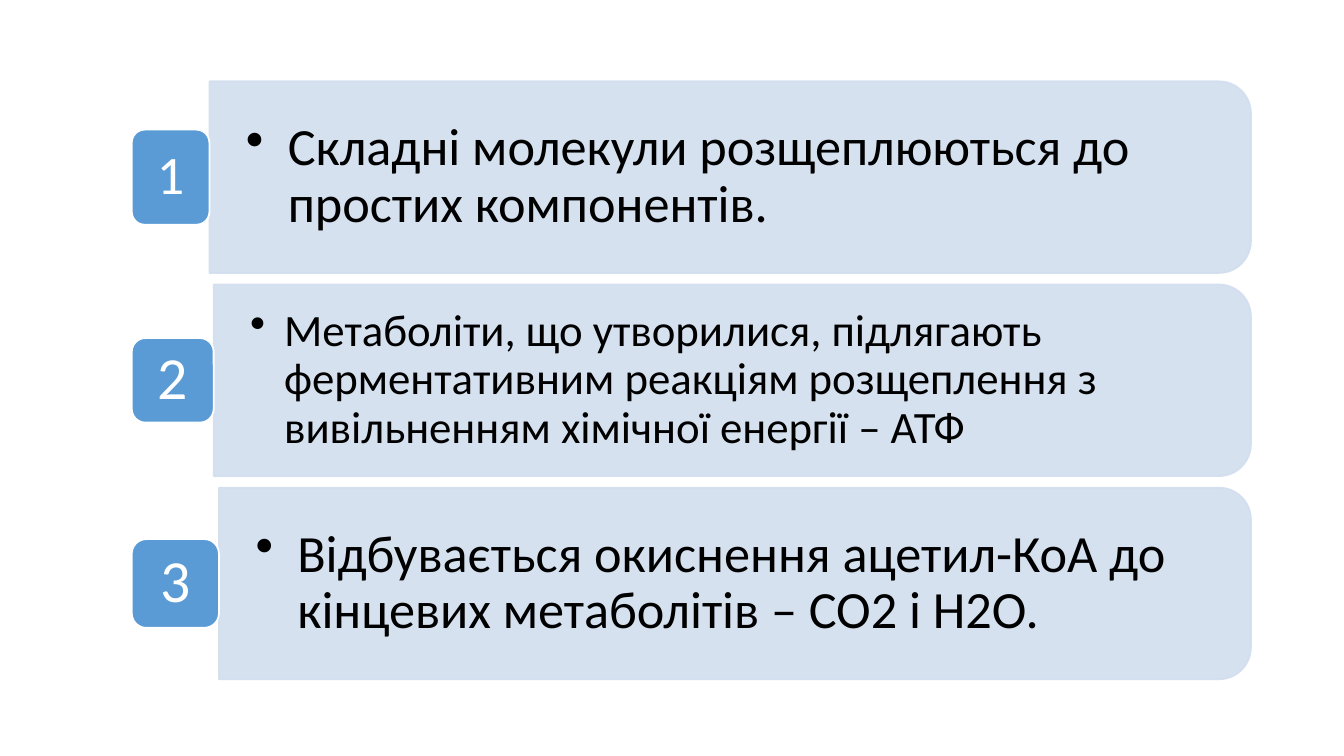
"""Build a slide with three numbered stages."""
import lxml.etree
import pptx
import pptx.dml.color
import pptx.enum.shapes
import pptx.enum.text
import pptx.oxml.ns
import pptx.util

Cm = pptx.util.Cm
Pt = pptx.util.Pt
RGBColor = pptx.dml.color.RGBColor
Shape = pptx.enum.shapes.MSO_SHAPE
Align = pptx.enum.text.PP_ALIGN
qn = pptx.oxml.ns.qn

PALE = RGBColor(0xD2, 0xDE, 0xEF)
BLUE = RGBColor(0x5B, 0x9B, 0xD5)
WHITE = RGBColor(0xFF, 0xFF, 0xFF)
BLACK = RGBColor(0, 0, 0)

LEFT, RIGHT = 2.49, 23.64
FIRST, PITCH = 3.35, 3.84
HIGH = 3.62

STAGES = [
    ("Складні молекули розщеплюються до простих компонентів.", 28, 0.79, 1.47, 1.8, 29),
    ("Метаболіти, що утворилися, підлягають ферментативним реакціям розщеплення "
     "з вивільненням хімічної енергії – АТФ", 24, 0.64, 1.55, 1.6, 32),
    ("Відбувається окиснення ацетил-КоА до кінцевих метаболітів – CO2 і H2O.",
     28, 0.79, 1.65, 1.68, 32),
]


def write(shape, text, size, color, align=Align.LEFT, pad=(0.69, 0.36), indent=None):
    """Put one formatted paragraph in a shape, with a bullet if it has an indent."""
    frame = shape.text_frame
    frame.word_wrap = True
    frame.vertical_anchor = pptx.enum.text.MSO_ANCHOR.MIDDLE
    frame.margin_left = frame.margin_right = Cm(pad[0])
    frame.margin_top = frame.margin_bottom = Cm(pad[1])
    para = frame.paragraphs[0]
    para.alignment = align
    para.line_spacing = 0.9
    if indent:
        para.level = 1
        props = para._p.get_or_add_pPr()
        props.set("marL", str(Cm(indent)))
        props.set("indent", str(-Cm(indent)))
        lxml.etree.SubElement(props, qn("a:buChar")).set("char", "•")
    run = para.add_run()
    run.text = text
    run.font.name = "Calibri"
    run.font.size = Pt(size)
    run.font.color.rgb = color


def paint(shape, fill, line):
    """Give a shape a flat fill and a thin line."""
    shape.shadow.inherit = False
    shape.fill.solid()
    shape.fill.fore_color.rgb = fill
    shape.line.color.rgb = line
    shape.line.width = Pt(1)


def add_panel(slide, left, mid):
    """Add a see-through panel, turned so that its round corners face right."""
    wide = RIGHT - left
    panel = slide.shapes.add_shape(
        Shape.ROUND_2_SAME_RECTANGLE, Cm((left + RIGHT - HIGH) / 2),
        Cm(mid - wide / 2), Cm(HIGH), Cm(wide))
    panel.rotation = 90
    paint(panel, PALE, PALE)
    for color in panel._element.spPr.iter(qn("a:srgbClr")):
        lxml.etree.SubElement(color, qn("a:alpha")).set("val", "90000")


def add_body(slide, left, mid, text, size, indent):
    """Add the bulleted text over a panel."""
    high = 3.25
    box = slide.shapes.add_textbox(
        Cm(left), Cm(mid - high / 2), Cm(RIGHT - 0.18 - left), Cm(high))
    write(box, text, size, BLACK, indent=indent)


def add_tile(slide, mid, wide, high, text, size):
    """Add a numbered tile."""
    tile = slide.shapes.add_shape(
        Shape.ROUNDED_RECTANGLE, Cm(LEFT), Cm(mid - high / 2), Cm(wide), Cm(high))
    paint(tile, BLUE, WHITE)
    write(tile, text, size, WHITE, align=Align.CENTER, pad=(0.38, 0.23))


def main():
    """Build and save the slide."""
    deck = pptx.Presentation()
    deck.slide_width, deck.slide_height = Cm(25.4), Cm(14.29)
    slide = deck.slides.add_slide(deck.slide_layouts[6])
    for row, (text, size, indent, wide, high, big) in enumerate(STAGES):
        mid = FIRST + row * PITCH
        left = LEFT + wide
        add_panel(slide, left, mid)
        add_body(slide, left, mid, text, size, indent)
        add_tile(slide, mid, wide, high, str(row + 1), big)
    deck.save("out.pptx")


if __name__ == "__main__":
    main()
